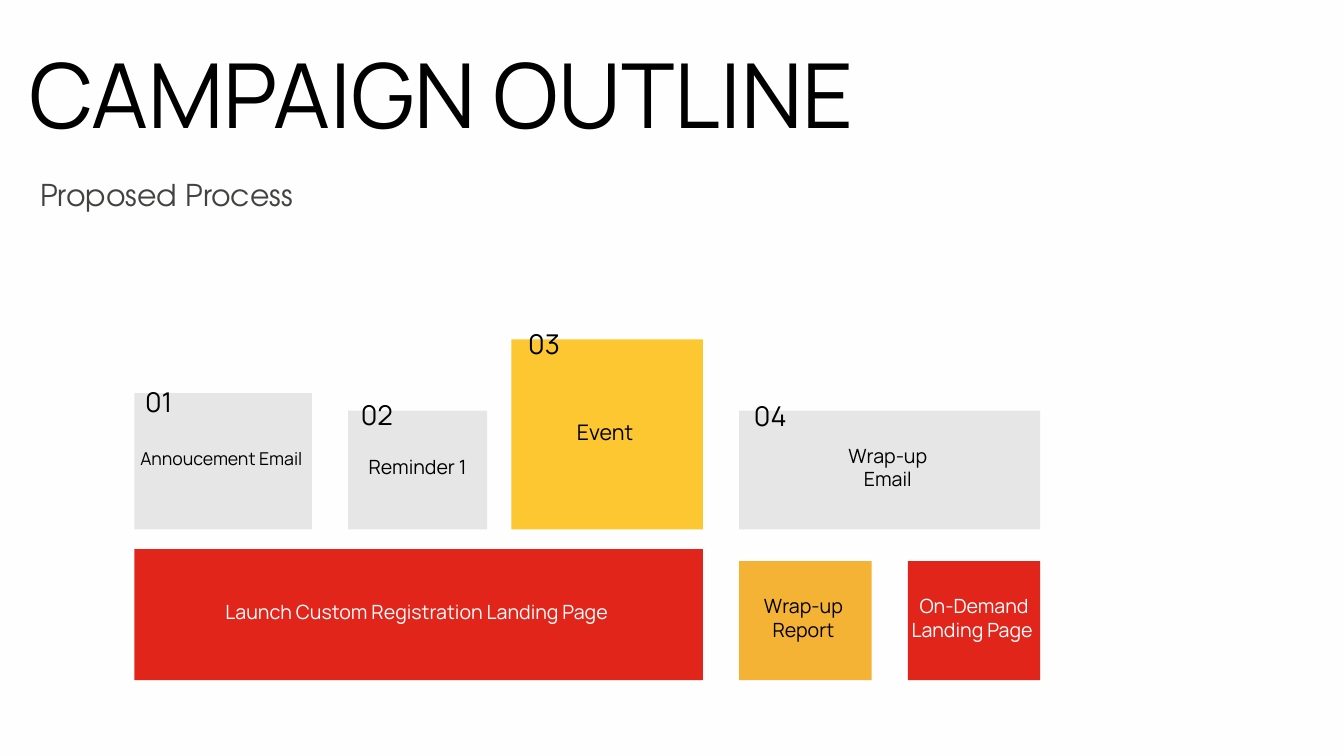
from dataclasses import dataclass
from itertools import accumulate

from pptx import Presentation
from pptx.dml.color import RGBColor as Color
from pptx.enum.shapes import MSO_SHAPE as Shape
from pptx.enum.text import MSO_ANCHOR as Anchor, PP_ALIGN as Align
from pptx.util import Inches, Pt


@dataclass(frozen=True)
class Theme:
    font: str = "Manrope"
    subtitle_font: str = "TeX Gyre Adventor"
    background: str = "FEFEFE"
    black: str = "000000"
    white: str = "FFFFFF"
    charcoal: str = "424240"
    grey: str = "E6E6E6"
    yellow: str = "FCC730"
    amber: str = "F5B335"
    red: str = "E1251B"
    title: float = 96
    subtitle: float = 32.1
    number: float = 29.2
    event: float = 23
    label: float = 21
    small: float = 19


THEME = Theme()
GRID_LEFT = 2
COLUMN_WIDTHS = (2.64, 2.07, 2.85, 1.97, 1.97)
GUTTERS = (0.54, 0.36, 0.54, 0.54)
COLUMN_LEFTS = tuple(accumulate(
    (width + gap for width, gap in zip(COLUMN_WIDTHS, GUTTERS)), initial=GRID_LEFT))
ROW_BOTTOMS = (7.88, 10.12)


def write(shape, text, size, color=THEME.black, font=THEME.font, align=Align.LEFT,
          anchor=Anchor.TOP, spacing=None, margins=(0, 0, 0, 0)):
    frame = shape.text_frame
    frame.word_wrap = True
    frame.vertical_anchor = anchor
    (frame.margin_left, frame.margin_top,
     frame.margin_right, frame.margin_bottom) = map(Inches, margins)
    for index, line in enumerate(text.split("\n")):
        para = frame.paragraphs[0] if index == 0 else frame.add_paragraph()
        para.alignment = align
        para.line_spacing = Pt(spacing or size * 1.2)
        span = para.add_run()
        span.text = line
        span.font.name = font
        span.font.size = Pt(size)
        span.font.color.rgb = Color.from_string(color)


def add_text(page, left, top, width, height, text, size, **style):
    box = page.shapes.add_textbox(*map(Inches, (left, top, width, height)))
    write(box, text, size, **style)


def add_block(page, text, row, first, last, height, fill,
              size=THEME.label, color=THEME.black):
    left = COLUMN_LEFTS[first]
    width = COLUMN_LEFTS[last] + COLUMN_WIDTHS[last] - left
    top = ROW_BOTTOMS[row] - height
    block = page.shapes.add_shape(Shape.RECTANGLE, *map(Inches, (left, top, width, height)))
    block.shadow.inherit = False
    block.fill.solid()
    block.fill.fore_color.rgb = Color.from_string(fill)
    block.line.fill.background()
    write(block, text, size, color=color, align=Align.CENTER, anchor=Anchor.MIDDLE,
          margins=(0.01, 0.01, 0.01, 0.1))
    return left, top


def add_step(page, number, indent, rise, **block):
    left, top = add_block(page, row=0, **block)
    add_text(page, left + indent, top - rise, 0.76, 0.65, f"{number:02}",
             THEME.number, spacing=48.5)


def main():
    deck = Presentation()
    deck.slide_width, deck.slide_height = Inches(20), Inches(11.25)
    page = deck.slides.add_slide(deck.slide_layouts[6])
    page.background.fill.solid()
    page.background.fill.fore_color.rgb = Color.from_string(THEME.background)

    add_text(page, 0.44, 0.71, 12.88, 1.59, "CAMPAIGN OUTLINE", THEME.title, spacing=105.6)
    add_text(page, 0.6, 2.61, 4.34, 0.62, "Proposed Process", THEME.subtitle,
             color=THEME.charcoal, font=THEME.subtitle_font, spacing=40.1)

    add_step(page, 1, 0.16, 0.3, text="Annoucement Email ", first=0, last=0,
             height=2.03, fill=THEME.grey, size=THEME.small)
    add_step(page, 2, 0.19, 0.37, text="Reminder 1", first=1, last=1,
             height=1.77, fill=THEME.grey)
    add_step(page, 3, 0.25, 0.37, text="Event ", first=2, last=2,
             height=2.83, fill=THEME.yellow, size=THEME.event)
    add_step(page, 4, 0.22, 0.36, text="Wrap-up \nEmail ", first=3, last=4,
             height=1.77, fill=THEME.grey)

    add_block(page, "Launch Custom Registration Landing Page ", 1, 0, 2, 1.95,
              THEME.red, color=THEME.white)
    add_block(page, "Wrap-up \nReport ", 1, 3, 3, 1.77, THEME.amber)
    add_block(page, "On-Demand Landing Page ", 1, 4, 4, 1.77, THEME.red, color=THEME.white)

    deck.save("out.pptx")


if __name__ == "__main__":
    main()
